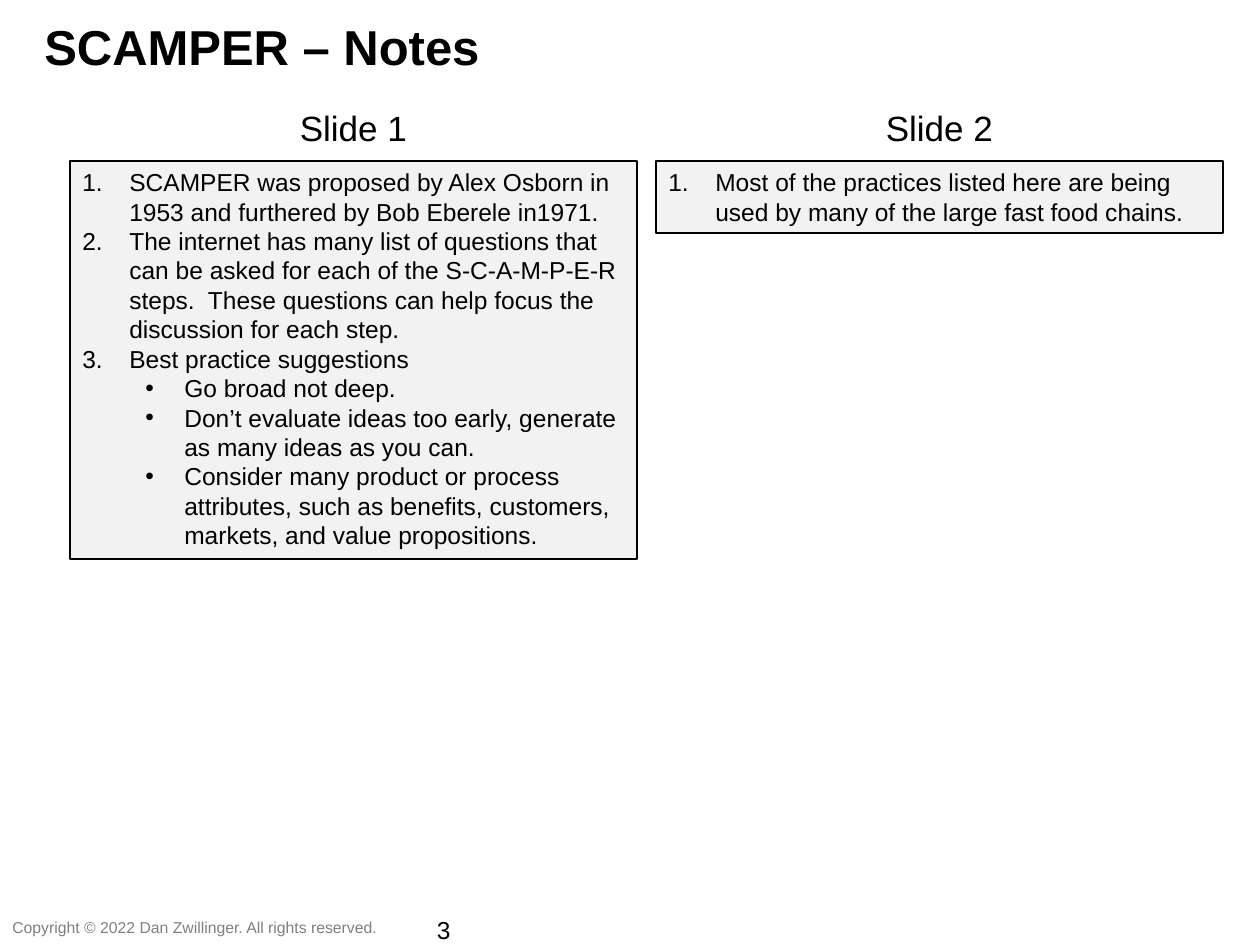
from lxml.etree import SubElement
from pptx import Presentation
from pptx.dml.color import RGBColor
from pptx.enum.shapes import MSO_SHAPE as Shape
from pptx.enum.text import MSO_ANCHOR as Anchor, MSO_AUTO_SIZE as AutoSize, PP_ALIGN as Align
from pptx.oxml.ns import qn
from pptx.util import Pt

PX = 914400 // 126
FONT = "Arial"
COLORS = {"text": "000000", "panel": "F2F2F2", "border": "000000", "footer": "808080"}

COLUMN_LEFT, COLUMN_STEP, COLUMN_WIDTH = 70, 586, 567
HEADING_TOP, HEADING_HEIGHT = 100, 55
PANEL_TOP = 161

# Each level: bullet tag, its attributes, left margin and hanging indent in px
LEVELS = [
    ("a:buAutoNum", {"type": "arabicPeriod"}, 47, 47),
    ("a:buChar", {"char": "•"}, 102, 39),
]

# Each column: heading, panel height, notes as (level, text)
COLUMNS = [
    ("Slide 1", 398, [
        (0, "SCAMPER was proposed by Alex Osborn in 1953 and furthered by Bob Eberele in1971."),
        (0, "The internet has many list of questions that can be asked for each of the "
            "S-C-A-M-P-E-R steps.  These questions can help focus the discussion for each step."),
        (0, "Best practice suggestions"),
        (1, "Go broad not deep."),
        (1, "Don’t evaluate ideas too early, generate as many ideas as you can."),
        (1, "Consider many product or process attributes, such as benefits, customers, "
            "markets, and value propositions."),
    ]),
    ("Slide 2", 72, [
        (0, "Most of the practices listed here are being used by many of the large "
            "fast food chains."),
    ]),
]


def px(*lengths):
    return [length * PX for length in lengths]


def color(name):
    return RGBColor.from_string(COLORS[name])


def add_run(paragraph, text, size, color_name="text", bold=False):
    run = paragraph.add_run()
    run.text = text
    run.font.name = FONT
    run.font.size = Pt(size)
    run.font.bold = bold
    run.font.color.rgb = color(color_name)


def add_label(slide, box, text, size, align=Align.LEFT, wrap=True, **style):
    frame = slide.shapes.add_textbox(*px(*box)).text_frame
    frame.word_wrap = wrap
    paragraph = frame.paragraphs[0]
    paragraph.alignment = align
    add_run(paragraph, text, size, **style)


def set_bullet(paragraph, level):
    tag, attributes, margin, hanging = LEVELS[level]
    paragraph.level = level
    properties = paragraph._p.get_or_add_pPr()
    properties.set("marL", str(margin * PX))
    properties.set("indent", str(-hanging * PX))
    SubElement(properties, qn("a:buFont"), typeface=FONT)
    SubElement(properties, qn(tag), attributes)


def add_notes_panel(slide, box, notes):
    panel = slide.shapes.add_shape(Shape.RECTANGLE, *px(*box))
    panel.shadow.inherit = False
    panel.fill.solid()
    panel.fill.fore_color.rgb = color("panel")
    panel.line.color.rgb = color("border")
    panel.line.width = Pt(0.75)
    frame = panel.text_frame
    frame.word_wrap = True
    frame.auto_size = AutoSize.SHAPE_TO_FIT_TEXT
    frame.vertical_anchor = Anchor.TOP
    for index, (level, text) in enumerate(notes):
        paragraph = frame.add_paragraph() if index else frame.paragraphs[0]
        paragraph.alignment = Align.LEFT
        set_bullet(paragraph, level)
        add_run(paragraph, text, 14)


def main():
    presentation = Presentation()
    presentation.slide_width, presentation.slide_height = px(1260, 945)
    slide = presentation.slides.add_slide(presentation.slide_layouts[6])

    add_label(slide, (32, 10, 1196, 72), "SCAMPER – Notes", 28, bold=True)
    for index, (heading, panel_height, notes) in enumerate(COLUMNS):
        left = COLUMN_LEFT + index * COLUMN_STEP
        add_label(slide, (left, HEADING_TOP, COLUMN_WIDTH, HEADING_HEIGHT),
                  heading, 20, Align.CENTER)
        add_notes_panel(slide, (left, PANEL_TOP, COLUMN_WIDTH, panel_height), notes)

    add_label(slide, (0, 912, 394, 32), "Copyright © 2022 Dan Zwillinger. All rights reserved.",
              9, wrap=False, color_name="footer")
    add_label(slide, (394, 909, 69, 34), "3", 14, Align.RIGHT)
    presentation.save("out.pptx")


if __name__ == "__main__":
    main()
